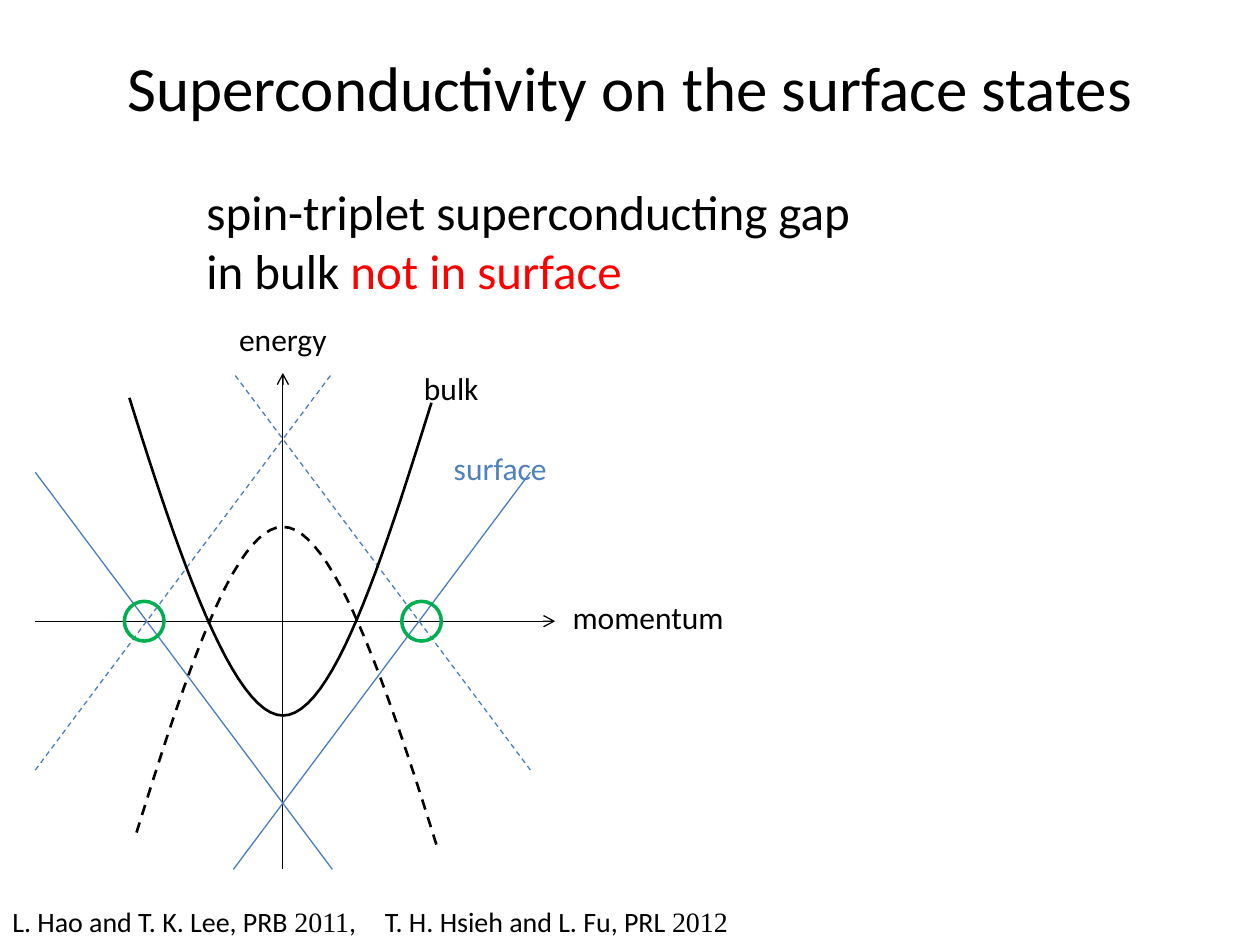
from collections import namedtuple
from lxml import etree
from pptx import Presentation, util as u
from pptx.dml.color import RGBColor
from pptx.enum import dml, shapes, text
from pptx.oxml import ns

BLACK = RGBColor(0, 0, 0)
RED = RGBColor(0xFF, 0, 0)
BLUE = RGBColor(0x4B, 0x7E, 0xBC)
SKY = RGBColor(0x4F, 0x81, 0xBD)
GREEN = RGBColor(0, 0xB0, 0x50)
SANS, SERIF = "Calibri", "Times New Roman"

Box = namedtuple("Box", "x y w h")


def part(box, x, y, w=0, h=0):
    return Box(box.x + x * box.w, box.y + y * box.h, w * box.w, h * box.h)


def emu(*vals):
    return [u.Inches(v) for v in vals]


def write(slide, box, lines, size, align=text.PP_ALIGN.LEFT,
          anchor=text.MSO_ANCHOR.TOP):
    frame = slide.shapes.add_textbox(*emu(*box)).text_frame
    frame.word_wrap = True
    frame.vertical_anchor = anchor
    for i, line in enumerate(lines):
        para = frame.add_paragraph() if i else frame.paragraphs[0]
        para.alignment = align
        for words, color, face in line:
            run = para.add_run()
            run.text = words
            run.font.size = u.Pt(size)
            run.font.name = face
            run.font.color.rgb = color
    return frame


def ink(line, color, width, dash=False):
    line.color.rgb = color
    line.width = u.Pt(width)
    if dash:
        line.dash_style = dml.MSO_LINE.DASH


def stroke(slide, box, start, end, color, dash=False, arrow=False):
    a, b = part(box, *start), part(box, *end)
    line = slide.shapes.add_connector(
        shapes.MSO_CONNECTOR.STRAIGHT, *emu(a.x, a.y, b.x, b.y))
    ink(line.line, color, 0.75, dash)
    props = line._element.spPr
    if arrow:
        tail = etree.SubElement(line.line._get_or_add_ln(), ns.qn("a:tailEnd"))
        tail.set("type", "arrow")
    etree.SubElement(props, ns.qn("a:effectLst"))


def bend(pts, steps=24):
    for i in range(steps + 1):
        t = i / steps
        mix = ((1 - t) ** 3, 3 * t * (1 - t) ** 2, 3 * t * t * (1 - t), t ** 3)
        yield [sum(m * p[k] for m, p in zip(mix, pts)) for k in (0, 1)]


def band(slide, box, pts, dash=False):
    dots = list(bend(pts[:4])) + list(bend(pts[3:]))[1:]
    spots = [emu(*part(box, *dot)[:2]) for dot in dots]
    pen = slide.shapes.build_freeform(*spots[0])
    pen.add_line_segments(spots[1:], close=False)
    curve = pen.convert_to_shape()
    curve.shadow.inherit = False
    curve.fill.background()
    ink(curve.line, BLACK, 1.5, dash)


def ring(slide, box, x, y, r):
    mark = slide.shapes.add_shape(
        shapes.MSO_SHAPE.OVAL, *emu(*part(box, x - r, y - r, 2 * r, 2 * r)))
    mark.shadow.inherit = False
    mark.fill.background()
    ink(mark.line, GREEN, 2)


def graph(slide, box):
    stroke(slide, box, (0, 0.5), (1.05, 0.5), BLACK, arrow=True)
    stroke(slide, box, (0.5, 1), (0.5, 0), BLACK, arrow=True)
    for dash in (False, True):
        far, near = (0, 0.8) if dash else (1, 0.2)
        for start, end in ((0, 0.6), (1, 0.4)):
            stroke(slide, box, (start, near), (end, far), BLUE, dash)
    bulk = [(0.19, 0.05), (0.29, 0.37), (0.4, 0.69), (0.5, 0.69),
            (0.6, 0.69), (0.7, 0.38), (0.8, 0.06)]
    band(slide, box, bulk)
    band(slide, box, [(1 - x, 1 - y) for x, y in bulk], dash=True)
    for x in (0.22, 0.78):
        ring(slide, box, x, 0.5, 0.04)
    for words, x, y, w, color in (
            ("energy", 0.36, -0.12, 0.28, BLACK),
            ("bulk", 0.76, -0.02, 0.2, BLACK),
            ("surface", 0.82, 0.14, 0.28, SKY),
            ("momentum", 1.06, 0.44, 0.4, BLACK)):
        align = text.PP_ALIGN.CENTER if words == "energy" else text.PP_ALIGN.LEFT
        write(slide, part(box, x, y, w, 0.1), [[(words, color, SANS)]], 18, align)


def title(slide, box):
    write(slide, box, [[("Superconductivity on the surface states", BLACK, SANS)]],
          36, text.PP_ALIGN.CENTER, text.MSO_ANCHOR.MIDDLE)


def claim(slide, box):
    write(slide, box, [
        [("spin-triplet superconducting gap", BLACK, SANS)],
        [("in bulk ", BLACK, SANS), ("not in surface", RED, SANS)]], 28)


def source(slide, box):
    frame = write(slide, box, [[
        ("L. Hao and T. K. Lee, PRB ", BLACK, SANS), ("2011", BLACK, SERIF),
        (",\tT. H. Hsieh and L. Fu, PRL ", BLACK, SANS),
        ("2012", BLACK, SERIF)]], 16)
    props = frame.paragraphs[0]._p.get_or_add_pPr()
    tabs = etree.SubElement(props, ns.qn("a:tabLst"))
    stop = etree.SubElement(tabs, ns.qn("a:tab"))
    stop.set("pos", str(u.Inches(0.4 * box.w)))
    stop.set("algn", "l")


def main():
    deck = Presentation()
    page = Box(0, 0, 10, 7.5)
    deck.slide_width, deck.slide_height = emu(page.w, page.h)
    slide = deck.slides.add_slide(deck.slide_layouts[6])
    title(slide, Box(0, 0.06, page.w, 1.25))
    claim(slide, Box(1.54, 1.39, 6.42, 1.04))
    graph(slide, Box(0.28, 2.96, 3.93, 3.94))
    source(slide, Box(0, 7.13, 7.39, 0.37))
    deck.save("out.pptx")


if __name__ == "__main__":
    main()
